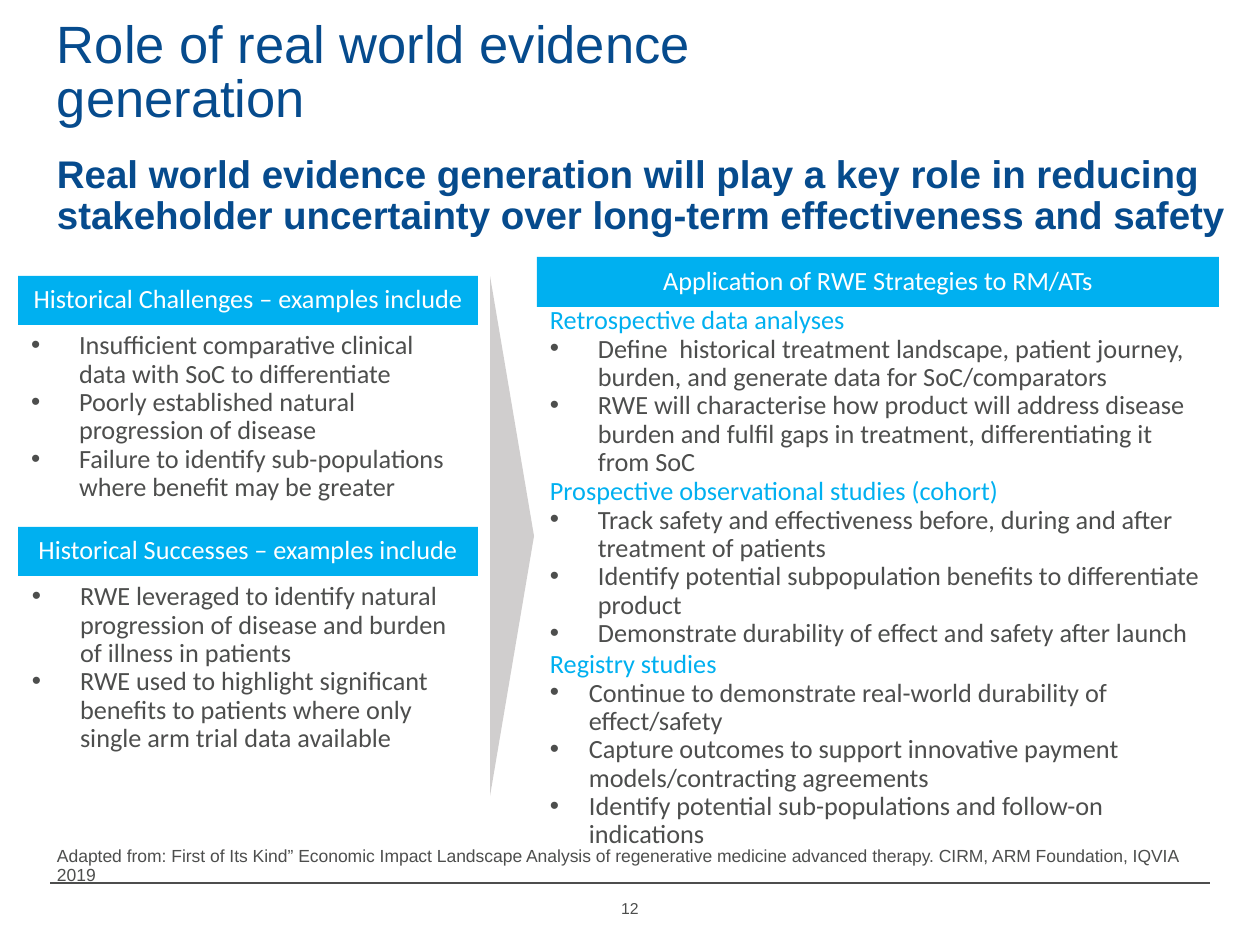
"""Build the slide on the role of real world evidence generation."""
from lxml import etree
from pptx import Presentation
from pptx import util as u
from pptx.dml.color import RGBColor
from pptx.enum import shapes, text
from pptx.oxml.ns import qn

THEME = {
    "navy": "064B8D", "sky": "00B0F0", "gray": "4D4E4D", "silver": "D0CECE", "white": "FFFFFF",
    "head": "Arial", "body": "Calibri", "spacing": 0.9,
    "title": 30, "subtitle": 22, "copy": 15, "source": 10, "page": 9,
}
LEFT, CENTER = text.PP_ALIGN.LEFT, text.PP_ALIGN.CENTER
TOP, MIDDLE, BOTTOM = text.MSO_ANCHOR.TOP, text.MSO_ANCHOR.MIDDLE, text.MSO_ANCHOR.BOTTOM
INSETS = (13, 6, 13, 6)

LABELS = [
    ("Role of real world evidence generation", (44, 8, 907, 126),
     {"size": "title", "color": "navy", "anchor": BOTTOM, "spacing": 0.85}),
    ("Real world evidence generation will play a key role in reducing stakeholder uncertainty "
     "over long-term effectiveness and safety", (44, 149, 1216, 54),
     {"size": "subtitle", "color": "navy", "bold": True}),
    ("Adapted from: First of Its Kind” Economic Impact Landscape Analysis of regenerative medicine "
     "advanced therapy. CIRM, ARM Foundation, IQVIA 2019", (44, 828, 1166, 57),
     {"size": "source", "anchor": BOTTOM, "insets": (13, 0, 0, 0)}),
    ("12", (600, 895, 60, 32), {"size": "page", "align": CENTER, "insets": (0, 6, 0, 6)}),
]
BARS = [
    ("Historical Challenges – examples include", (18, 276, 460, 49)),
    ("Historical Successes – examples include", (18, 527, 460, 49)),
    ("Application of RWE Strategies to RM/ATs", (537, 257, 682, 50)),
]
LISTS = [
    (None, (18, 326, 460, 171), 48, [
        "Insufficient comparative clinical data with SoC to differentiate",
        "Poorly established natural progression of disease",
        "Failure to identify sub-populations where benefit may be greater"]),
    (None, (19, 577, 460, 183), 48, [
        "RWE leveraged to identify natural progression of disease and burden of illness in patients",
        "RWE used to highlight significant benefits to patients where only single arm trial data available"]),
    ("Retrospective data analyses", (537, 301, 682, 180), 48, [
        "Define  historical treatment landscape, patient journey, burden, and generate data for SoC/comparators",
        "RWE will characterise how product will address disease burden and fulfil gaps in treatment, "
        "differentiating it from SoC"]),
    ("Prospective observational studies (cohort)", (537, 472, 682, 180), 48, [
        "Track safety and effectiveness before, during and after treatment of patients",
        "Identify potential subpopulation benefits to differentiate product",
        "Demonstrate durability of effect and safety after launch"]),
    ("Registry studies", (537, 645, 682, 207), 39, [
        "Continue to demonstrate real-world durability of effect/safety",
        "Capture outcomes to support innovative payment models/contracting agreements",
        "Identify potential sub-populations and follow-on indications"]),
]
ARROW = (252, 514, 520, 44)
RULE = (1210, 883, 50, 883)


def px(*lengths):
    return [u.Emu(round(length * 914400 / 126)) for length in lengths]


def rgb(name):
    return RGBColor.from_string(THEME[name])


def set_all(target, values):
    for name, value in values.items():
        setattr(target, name, value)


def prepare_frame(box, anchor=TOP, insets=INSETS):
    frame = box.text_frame
    margins = zip(("margin_left", "margin_top", "margin_right", "margin_bottom"), px(*insets))
    set_all(frame, {"word_wrap": True, "vertical_anchor": anchor, **dict(margins)})
    return frame


def write(para, wording, size="copy", color="gray", font="body", bold=False,
          align=LEFT, spacing=THEME["spacing"]):
    set_all(para, {"alignment": align, "line_spacing": spacing})
    span = para.add_run()
    span.text = wording
    set_all(span.font, {"name": THEME[font], "size": u.Pt(THEME[size]), "bold": bold})
    span.font.color.rgb = rgb(color)


def add_bullet(para, indent):
    props = para._p.get_or_add_pPr()
    offset = px(indent)[0]
    props.set("marL", str(offset))
    props.set("indent", str(-offset))
    etree.SubElement(props, qn("a:buFont")).set("typeface", THEME["head"])
    etree.SubElement(props, qn("a:buChar")).set("char", "•")


def add_label(page, wording, place, style):
    style = dict(style)
    framing = {key: style.pop(key) for key in ("anchor", "insets") if key in style}
    frame = prepare_frame(page.shapes.add_textbox(*px(*place)), **framing)
    write(frame.paragraphs[0], wording, font="head", **style)


def add_filled(page, kind, place, color):
    shape = page.shapes.add_shape(kind, *px(*place))
    shape.shadow.inherit = False
    shape.fill.solid()
    shape.fill.fore_color.rgb = rgb(color)
    shape.line.fill.background()
    return shape


def add_list(page, heading, place, indent, items):
    frame = prepare_frame(page.shapes.add_textbox(*px(*place)))
    lines = ([(heading, False)] if heading else []) + [(item, True) for item in items]
    for index, (wording, bulleted) in enumerate(lines):
        para = frame.add_paragraph() if index else frame.paragraphs[0]
        if bulleted:
            add_bullet(para, indent)
        write(para, wording, color="gray" if bulleted else "sky")


def add_rule(page):
    rule = page.shapes.add_connector(shapes.MSO_CONNECTOR.STRAIGHT, *px(*RULE))
    rule.line.color.rgb = rgb("gray")
    rule.line.width = u.Pt(0.75)
    etree.SubElement(rule._element.spPr, qn("a:effectLst"))


def main():
    deck = Presentation()
    deck.slide_width, deck.slide_height = px(1260, 945)
    page = deck.slides.add_slide(deck.slide_layouts[6])
    add_rule(page)
    for label in LABELS:
        add_label(page, *label)
    for wording, place in BARS:
        bar = add_filled(page, shapes.MSO_SHAPE.RECTANGLE, place, "sky")
        frame = prepare_frame(bar, MIDDLE)
        write(frame.paragraphs[0], wording, color="white", align=CENTER)
    add_filled(page, shapes.MSO_SHAPE.ISOSCELES_TRIANGLE, ARROW, "silver").rotation = 90
    for entry in LISTS:
        add_list(page, *entry)
    deck.save("out.pptx")


if __name__ == "__main__":
    main()
